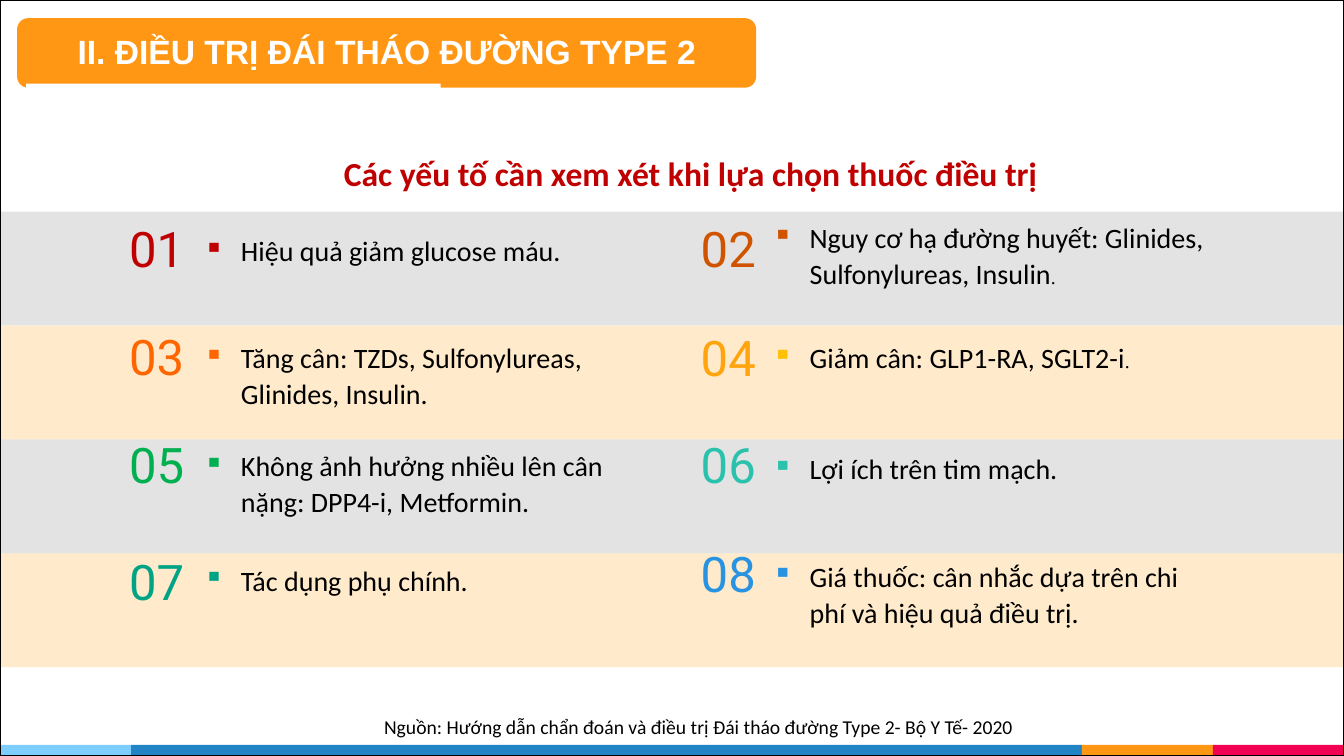
from lxml import etree
from pptx import Presentation
from pptx import util as u
from pptx.dml.color import RGBColor
from pptx.enum import shapes, text
from pptx.oxml.ns import qn

# Content
HEAD = "II. ĐIỀU TRỊ ĐÁI THÁO ĐƯỜNG TYPE 2"
TITLE = "Các yếu tố cần xem xét khi lựa chọn thuốc điều trị"
SOURCE = "Nguồn: Hướng dẫn chẩn đoán và điều trị Đái tháo đường Type 2- Bộ Y Tế- 2020"

# Lines, number colour, bullet colour, number top, text top, text width, small full stop
ITEMS = [
    (["Hiệu quả giảm glucose máu."], "C00000", "C00000", 2.16, 2.31, 3.57, False),
    (["Nguy cơ hạ đường huyết: Glinides,", "Sulfonylureas, Insulin"],
     "D05400", "D05400", 2.16, 2.15, 4.31, True),
    (["Tăng cân: TZDs, Sulfonylureas,", "Glinides, Insulin."],
     "FF6600", "FF6600", 3.23, 3.34, 3.82, False),
    (["Giảm cân: GLP1-RA, SGLT2-i"], "FFA40E", "FFC000", 3.24, 3.37, 4.31, True),
    (["Không ảnh hưởng nhiều lên cân", "nặng: DPP4-i, Metformin."],
     "00B050", "00B050", 4.3, 4.41, 3.99, False),
    (["Lợi ích trên tim mạch."], "2AC2AC", "2AC2AC", 4.3, 4.47, 2.87, False),
    (["Tác dụng phụ chính."], "00A485", "00A485", 5.46, 5.58, 2.67, False),
    (["Giá thuốc: cân nhắc dựa trên chi", "phí và hiệu quả điều trị."],
     "2993E1", "2993E1", 5.38, 5.51, 4.06, False),
]
COLS = [(1.28, 2), (6.95, 7.64)]  # number left, text left
FOOT = [(0, 1.3, "7ECEFD"), (1.3, 9.43, "2185C5"),
        (10.73, 1.3, "FF9715"), (12.03, 1.3, "F20253")]

THEME = {
    "head": {"name": "Arial", "size": 24, "bold": True, "color": "FFFFFF"},
    "title": {"name": "Calibri", "size": 24, "bold": True, "color": "C00000"},
    "body": {"name": "Calibri", "size": 20, "color": "000000"},
    "dot": {"name": "Times New Roman", "size": 14, "color": "000000"},
    "note": {"name": "Calibri", "size": 14, "color": "000000"},
    "num": {"name": "Roboto", "size": 35},
    "bands": ["7F7F7F", "FFA40E"],
    "alpha": 21,
    "tab": "FF9715",
    "paper": "FFFFFF",
    "frame": "000000",
}
WIDE, HIGH = 13.33, 7.5
BAND_TOP, BAND = 2.1, 1.13

deck = Presentation()
deck.slide_width, deck.slide_height = u.Inches(WIDE), u.Inches(HIGH)
slide = deck.slides.add_slide(deck.slide_layouts[6])


def block(x, y, w, h, color=None, kind=shapes.MSO_SHAPE.RECTANGLE, alpha=None):
    shape = slide.shapes.add_shape(kind, *map(u.Inches, (x, y, w, h)))
    shape.shadow.inherit = False
    shape.line.fill.background()
    if color is None:
        shape.fill.background()
        return shape
    shape.fill.solid()
    shape.fill.fore_color.rgb = RGBColor.from_string(color)
    if alpha:
        tint = shape.fill._xPr.find(qn("a:solidFill"))[0]
        etree.SubElement(tint, qn("a:alpha"), val=str(alpha * 1000))
    return shape


def write(para, words, style):
    run = para.add_run()
    run.text = words
    for key, val in style.items():
        if key == "color":
            run.font.color.rgb = RGBColor.from_string(val)
        else:
            setattr(run.font, key, u.Pt(val) if key == "size" else val)


def box(x, y, w, h, lines, style, inset=0.01):
    frame = slide.shapes.add_textbox(*map(u.Inches, (x, y, w, h))).text_frame
    form = {"margin_left": 0, "margin_right": 0, "margin_bottom": 0,
            "margin_top": u.Inches(inset), "word_wrap": True,
            "vertical_anchor": text.MSO_ANCHOR.TOP}
    for key, val in form.items():
        setattr(frame, key, val)
    for i, line in enumerate(lines):
        para = frame.add_paragraph() if i else frame.paragraphs[0]
        para.space_before = u.Pt(1.7 if i else 1)
        write(para, line, style)
    return frame.paragraphs


def indent(para, left, hang=0, color=None):
    props = para._p.get_or_add_pPr()
    props.set("marL", str(u.Inches(left)))
    props.set("indent", str(u.Inches(-hang)))
    if color:
        tint = etree.SubElement(props, qn("a:buClr"))
        etree.SubElement(tint, qn("a:srgbClr"), val=color)
        etree.SubElement(props, qn("a:buChar"), char="▪")


# Footer strip and row bands
for x, w, color in FOOT:
    block(x, 7.39, w, 0.11, color)
for row in range(4):
    block(0, BAND_TOP + row * BAND, WIDE, BAND, THEME["bands"][row % 2],
          alpha=THEME["alpha"])

# Heading tab
tab = block(0.17, 0.18, 7.33, 0.69, THEME["tab"], shapes.MSO_SHAPE.ROUNDED_RECTANGLE)
tab.adjustments[0] = 0.16
box(0.77, 0.3, 6.4, 0.43, [HEAD], THEME["head"])
block(0.26, 0.83, 4.11, 0.51, THEME["paper"])

# Numbered factors
for i, (lines, color, mark, top, y, w, dot) in enumerate(ITEMS):
    left, x = COLS[i % 2]
    box(left, top, 0.65, 0.61, [f"{i + 1:02}"], {**THEME["num"], "color": color})
    two = len(lines) > 1
    paras = box(x, y, w, 0.74 if two else 0.36, lines, THEME["body"],
                0.04 if two else 0.01)
    for j, para in enumerate(paras):
        indent(para, 0.39, 0 if j else 0.37, None if j else mark)
    if dot:
        write(paras[-1], ".", THEME["dot"])

# Title, source and frame
box(3.41, 1.51, 7.1, 0.43, [TITLE], THEME["title"])
box(3.81, 7.08, 6.5, 0.25, [SOURCE], THEME["note"])
edge = block(0, 0, WIDE, HIGH)
edge.line.color.rgb = RGBColor.from_string(THEME["frame"])
edge.line.width = u.Pt(1.92)

deck.save("out.pptx")
